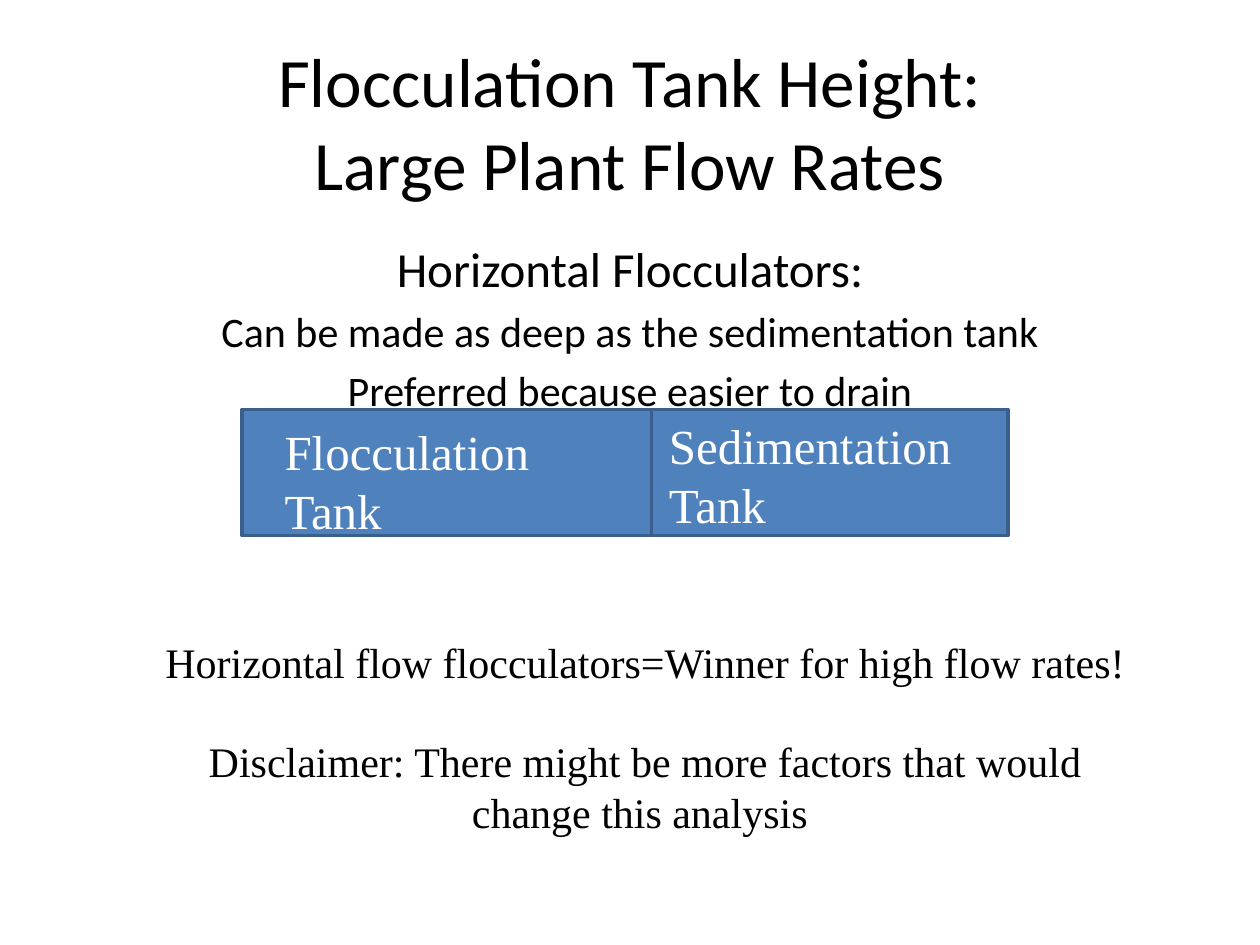
from pptx import Presentation
from pptx.dml.color import RGBColor
from pptx.enum.shapes import MSO_SHAPE
from pptx.enum.text import MSO_ANCHOR, MSO_AUTO_SIZE, PP_ALIGN
from pptx.util import Inches, Pt

SANS, SERIF = "Calibri", "Times New Roman"
BLACK, WHITE = "000000", "FFFFFF"
BLUE, EDGE = "4F81BD", "3A5F8C"


def color(code):
    return RGBColor.from_string(code)


def add_text(slide, box, lines, face, ink=BLACK, align=PP_ALIGN.CENTER, grow=False):
    """Each line is (text, size, space before), the last two in points."""
    frame = slide.shapes.add_textbox(*map(Inches, box)).text_frame
    frame.word_wrap = True
    frame.auto_size = MSO_AUTO_SIZE.SHAPE_TO_FIT_TEXT if grow else MSO_AUTO_SIZE.NONE
    frame.text = "\n".join(text for text, _, _ in lines)
    for para, (_, size, gap) in zip(frame.paragraphs, lines):
        para.alignment = align
        if gap:
            para.space_before = Pt(gap)
        for run in para.runs:
            run.font.name = face
            run.font.size = Pt(size)
            run.font.color.rgb = color(ink)
    return frame


def add_title(slide, box):
    text = "Flocculation Tank Height:\vLarge Plant Flow Rates"
    frame = add_text(slide, box, [(text, 39.6, 0)], SANS)
    frame.vertical_anchor = MSO_ANCHOR.MIDDLE


def add_body(slide, box):
    add_text(slide, box, [
        ("Horizontal Flocculators:", 28, 0),
        ("Can be made as deep as the sedimentation tank", 24, 4.8),
        ("Preferred because easier to drain", 24, 4.8),
    ], SANS)


def add_tanks(slide, box):
    left, top, width, height = box
    split = 3.25
    # Two tanks side by side
    for start, span in ((split, width - split), (0, split)):
        tank = slide.shapes.add_shape(
            MSO_SHAPE.RECTANGLE, Inches(left + start), Inches(top),
            Inches(span), Inches(height))
        tank.shadow.inherit = False
        tank.fill.solid()
        tank.fill.fore_color.rgb = color(BLUE)
        tank.line.color.rgb = color(EDGE)
        tank.line.width = Pt(2)
    # Labels: text, offset from the tanks' corner, size
    labels = (
        ("Flocculation Tank", 0.24, 0.05, 2.25, 0.4),
        ("Sedimentation Tank", 3.29, 0, 2.78, 1.04),
    )
    for text, dx, dy, span, tall in labels:
        add_text(slide, (left + dx, top + dy, span, tall), [(text, 28, 0)],
                 SERIF, WHITE, PP_ALIGN.LEFT, grow=True)


def add_verdict(slide, box):
    add_text(slide, box, [
        ("Horizontal flow flocculators=Winner for high flow rates!", 24, 0),
        ("Disclaimer: There might be more factors that would "
         "change this analysis ", 24, 28),
    ], SERIF, grow=True)


def main():
    deck = Presentation()
    deck.slide_width, deck.slide_height = Inches(10), Inches(7.5)
    slide = deck.slides.add_slide(deck.slide_layouts[6])
    add_title(slide, (0.75, 0.34, 8.5, 1.25))
    add_body(slide, (0, 1.84, 10, 1.42))
    add_tanks(slide, (1.92, 3.25, 6.08, 1))
    add_verdict(slide, (1.08, 5, 8.08, 1.72))
    deck.save("out.pptx")


if __name__ == "__main__":
    main()
